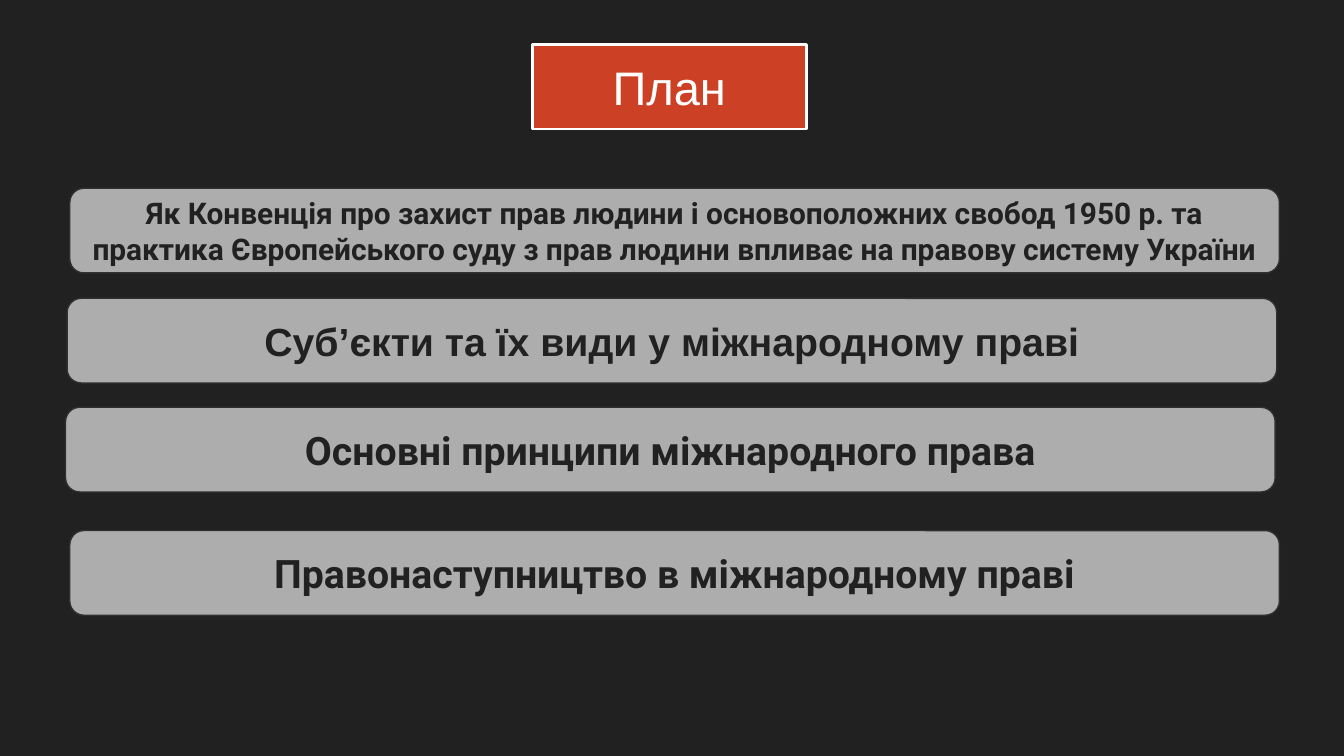
from pptx import Presentation, util as u
from pptx.dml.color import RGBColor
from pptx.enum import shapes, text

DARK, GREY, EDGE = "212121", "ADADAD", "303030"
RED, WHITE = "CC4125", "FFFFFF"

# left, top, font, size, words
BARS = [
    (1.32, 3.56, "Roboto", 16,
     "Як Конвенція про захист прав людини і основоположних свобод 1950 р. та "
     "практика Європейського суду з прав людини впливає на правову систему України"),
    (1.27, 5.64, "Arial", 21, "Суб’єкти та їх види у міжнародному праві"),
    (1.24, 7.7, "Roboto", 21, "Основні принципи міжнародного права"),
    (1.32, 10.03, "Roboto", 21, "Правонаступництво в міжнародному праві"),
]


def paint(fill, hue):
    fill.solid()
    fill.fore_color.rgb = RGBColor.from_string(hue)


def style(shape, hue, edge, width):
    paint(shape.fill, hue)
    paint(shape.line.fill, edge)
    shape.line.width = u.Pt(width)


def write(shape, words, font, size, hue, bold=False):
    frame = shape.text_frame
    frame.word_wrap = True
    frame.auto_size = text.MSO_AUTO_SIZE.NONE
    frame.vertical_anchor = text.MSO_ANCHOR.MIDDLE
    frame.margin_left = frame.margin_right = u.Cm(0.25)
    frame.margin_top = frame.margin_bottom = u.Cm(0.25)
    para = frame.paragraphs[0]
    para.alignment = text.PP_ALIGN.CENTER
    run = para.add_run()
    run.text = words
    run.font.name, run.font.size, run.font.bold = font, u.Pt(size), bold
    run.font.color.rgb = RGBColor.from_string(hue)


def head(slide, box, words):
    title = slide.shapes.title
    title.left, title.top, title.width, title.height = map(u.Cm, box)
    style(title, RED, WHITE, 1.5)
    write(title, words, "Arial", 25.2, WHITE)


def bar(slide, box, words, font, size):
    kind = shapes.MSO_SHAPE.FLOWCHART_ALTERNATE_PROCESS
    shape = slide.shapes.add_shape(kind, *map(u.Cm, box))
    shape.shadow.inherit = False
    style(shape, GREY, EDGE, 0.75)
    write(shape, words, font, size, DARK, bold=True)


def main():
    deck = Presentation()
    deck.slide_width, deck.slide_height = u.Cm(25.4), u.Cm(14.29)
    slide = deck.slides.add_slide(deck.slide_layouts[5])
    paint(slide.background.fill, DARK)
    head(slide, (10.06, 0.84, 5.18, 1.6), "План")
    for left, top, font, size, words in BARS:
        bar(slide, (left, top, 22.86, 1.6), words, font, size)
    deck.save("out.pptx")


if __name__ == "__main__":
    main()
